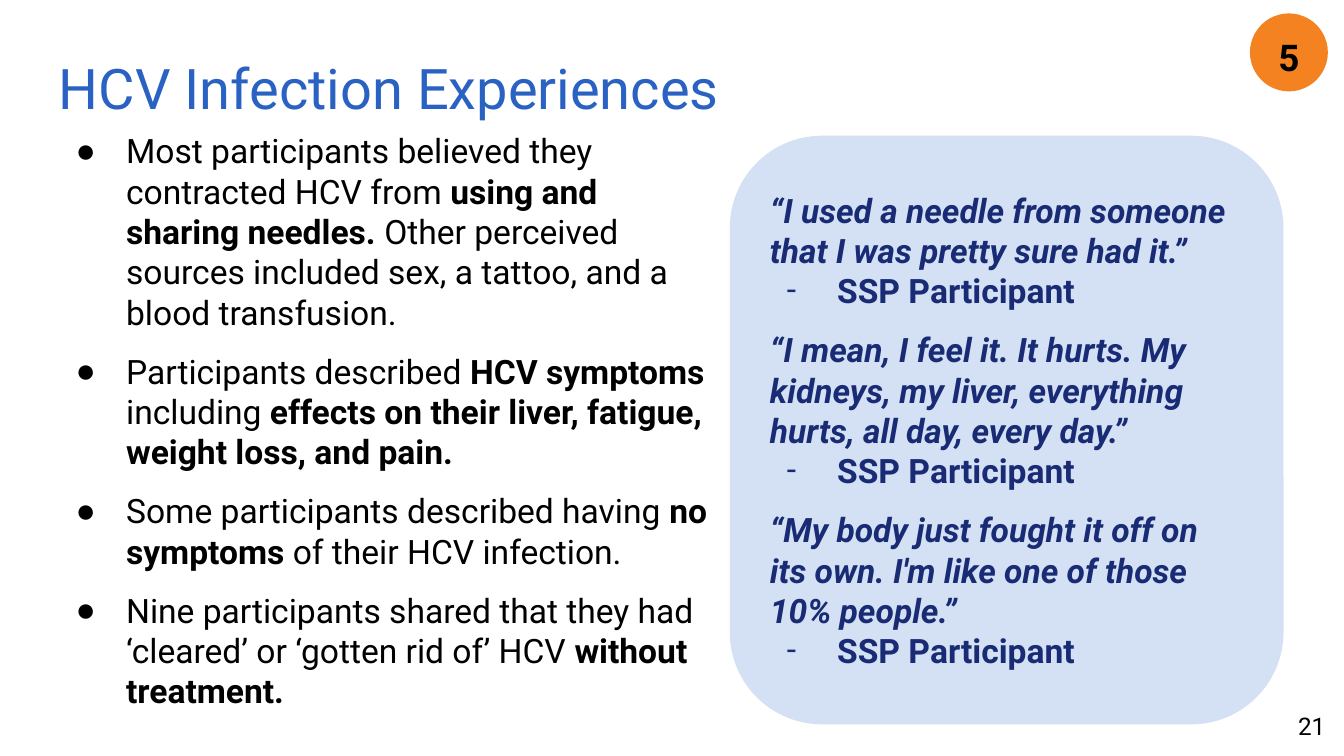
from dataclasses import dataclass

from lxml.etree import SubElement
from pptx import Presentation
from pptx.dml.color import RGBColor
from pptx.enum.shapes import MSO_SHAPE
from pptx.enum.text import MSO_ANCHOR, PP_ALIGN
from pptx.oxml.ns import qn
from pptx.util import Inches, Pt


@dataclass(frozen=True)
class Theme:
    font: str = "Roboto"
    dot_font: str = "Arial"
    title_color: str = "2A62C3"
    text_color: str = "000000"
    quote_color: str = "192B74"
    panel_color: str = "D4E0F3"
    badge_color: str = "F58220"
    title_size: float = 30
    body_size: float = 18
    badge_size: float = 19.7
    number_size: float = 13
    paragraph_gap: float = 10


THEME = Theme()

FINDINGS = [
    [("Most participants believed they contracted HCV from", False),
     (" using and sharing needles.", True),
     (" Other perceived sources included sex, a tattoo, and a blood transfusion.", False)],
    [("Participants described ", False),
     ("HCV symptoms", True),
     (" including ", False),
     ("effects on their liver, fatigue, weight loss, and pain.", True)],
    [("Some participants described having ", False),
     ("no symptoms", True),
     (" of their HCV infection.", False)],
    [("Nine participants shared that they had ‘cleared’ or ‘gotten rid of’ HCV ", False),
     ("without treatment.", True)],
]

QUOTES = [
    "“I used a needle from someone that I was pretty sure had it.”",
    "“I mean, I feel it. It hurts. My kidneys, my liver, everything hurts, all day, every day.”",
    "“My body just fought it off on its own. I'm like one of those 10% people.”",
]
SPEAKER = "SSP Participant"


def set_frame(frame, margin=0.1, anchor=MSO_ANCHOR.TOP):
    frame.word_wrap = True
    frame.vertical_anchor = anchor
    frame.margin_left = frame.margin_right = Inches(margin)
    frame.margin_top = frame.margin_bottom = Inches(margin)
    return frame


def add_text_frame(page, box, **options):
    shape = page.shapes.add_textbox(*map(Inches, box))
    return set_frame(shape.text_frame, **options)


def add_filled_shape(page, kind, box, color):
    shape = page.shapes.add_shape(kind, *map(Inches, box))
    shape.shadow.inherit = False
    shape.fill.solid()
    shape.fill.fore_color.rgb = RGBColor.from_string(color)
    shape.line.fill.background()
    return shape


def next_paragraph(frame, first):
    para = frame.paragraphs[0] if first else frame.add_paragraph()
    para.alignment = PP_ALIGN.LEFT
    return para


def add_span(para, text, size, color, bold=False, italic=False):
    span = para.add_run()
    span.text = text
    span.font.name = THEME.font
    span.font.size = Pt(size)
    span.font.color.rgb = RGBColor.from_string(color)
    span.font.bold = bold
    span.font.italic = italic


def set_bullet(para, mark, font, color):
    properties = para._p.get_or_add_pPr()
    properties.set("marL", str(Inches(0.5)))
    properties.set("indent", str(-Pt(27)))
    bullet_color = SubElement(properties, qn("a:buClr"))
    SubElement(bullet_color, qn("a:srgbClr"), val=color)
    SubElement(properties, qn("a:buFont"), typeface=font)
    SubElement(properties, qn("a:buChar"), char=mark)


def add_title(page, box, text):
    para = add_text_frame(page, box).paragraphs[0]
    add_span(para, text, THEME.title_size, THEME.title_color)


def add_findings(page, box, findings):
    frame = add_text_frame(page, box)
    for index, finding in enumerate(findings):
        para = next_paragraph(frame, index == 0)
        para.space_before = Pt(THEME.paragraph_gap if index else THEME.paragraph_gap / 2)
        set_bullet(para, "●", THEME.dot_font, THEME.text_color)
        for text, bold in finding:
            add_span(para, text, THEME.body_size, THEME.text_color, bold)
    para.space_after = Pt(THEME.paragraph_gap)


def add_quote_panel(page, box, quotes, speaker):
    panel = add_filled_shape(page, MSO_SHAPE.ROUNDED_RECTANGLE, box, THEME.panel_color)
    frame = set_frame(panel.text_frame, anchor=MSO_ANCHOR.MIDDLE)
    frame.margin_right = Inches(0.15)
    for index, quote in enumerate(quotes):
        para = next_paragraph(frame, index == 0)
        para.space_before = Pt(THEME.paragraph_gap if index else 0)
        add_span(para, quote, THEME.body_size, THEME.quote_color, True, True)
        credit = next_paragraph(frame, False)
        set_bullet(credit, "-", THEME.font, THEME.quote_color)
        add_span(credit, speaker, THEME.body_size, THEME.quote_color, True)


def add_badge(page, box, text):
    left, top, width, height = box
    add_filled_shape(page, MSO_SHAPE.OVAL, box, THEME.badge_color)
    label_box = (left + 0.1, top + 0.09, width - 0.2, height - 0.18)
    frame = add_text_frame(page, label_box, margin=0, anchor=MSO_ANCHOR.MIDDLE)
    para = frame.paragraphs[0]
    para.alignment = PP_ALIGN.CENTER
    para.line_spacing = 1.2
    add_span(para, text, THEME.badge_size, THEME.text_color, True)


def add_page_number(page, box, text):
    para = add_text_frame(page, box).paragraphs[0]
    para.alignment = PP_ALIGN.RIGHT
    add_span(para, text, THEME.number_size, THEME.text_color)


def main():
    deck = Presentation()
    deck.slide_width = Inches(10)
    deck.slide_height = deck.slide_width * 9 // 16
    page = deck.slides.add_slide(deck.slide_layouts[6])
    add_title(page, (0.34, 0.3, 9.16, 0.63), "HCV Infection Experiences")
    add_findings(page, (0.34, 0.87, 5.1, 4.54), FINDINGS)
    add_page_number(page, (9.36, 5.19, 0.6, 0.43), "21")
    add_badge(page, (9.3, 0.1, 0.58, 0.58), "5")
    add_quote_panel(page, (5.43, 1.01, 4.12, 4.38), QUOTES, SPEAKER)
    deck.save("out.pptx")


if __name__ == "__main__":
    main()
